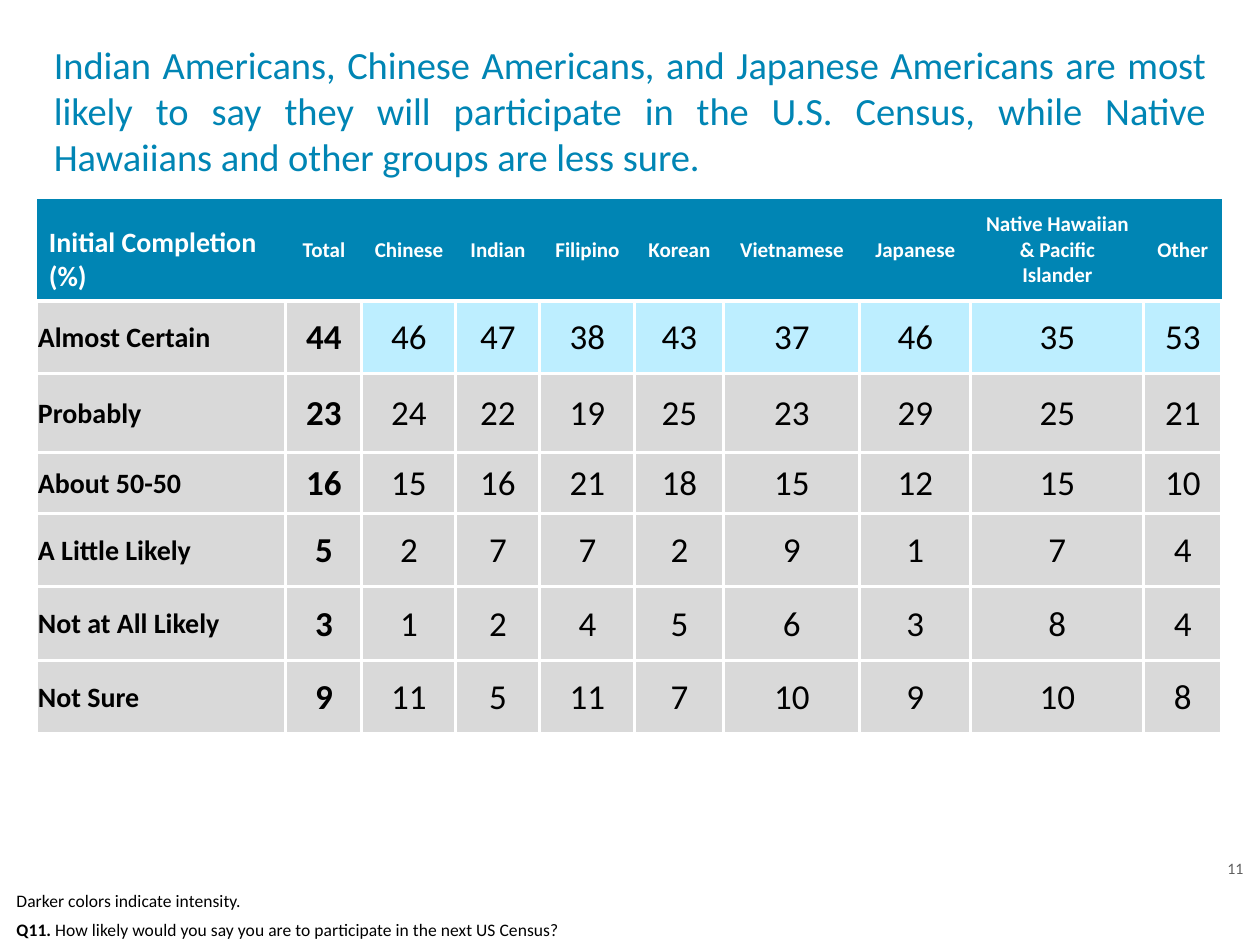
from lxml.etree import SubElement
from pptx import Presentation
from pptx.dml.color import RGBColor
from pptx.enum.text import MSO_ANCHOR, MSO_AUTO_SIZE, PP_ALIGN
from pptx.oxml.ns import qn
from pptx.util import Pt

PX = 914400 / 168


class Theme:
    font = "Calibri"
    blue, pale, grey = "0085B4", "BDEEFF", "D9D9D9"
    white, black, muted = "FFFFFF", "000000", "5F5F5F"
    title, label, head, value, note, number = 16.5, 12, 9, 15, 7.5, 6.8
    border = 1.5


TITLE = ("Indian Americans, Chinese Americans, and Japanese Americans are most "
         "likely to say they will participate in the U.S. Census, while Native "
         "Hawaiians and other groups are less sure.")
HEADINGS = ["Initial Completion (%)", "Total", "Chinese", "Indian", "Filipino",
            "Korean", "Vietnamese", "Japanese",
            "Native Hawaiian & Pacific Islander", "Other"]
ANSWERS = {
    "Almost Certain": [44, 46, 47, 38, 43, 37, 46, 35, 53],
    "Probably": [23, 24, 22, 19, 25, 23, 29, 25, 21],
    "About 50-50": [16, 15, 16, 21, 18, 15, 12, 15, 10],
    "A Little Likely": [5, 2, 7, 7, 2, 9, 1, 7, 4],
    "Not at All Likely": [3, 1, 2, 4, 5, 6, 3, 8, 4],
    "Not Sure": [9, 11, 5, 11, 7, 10, 9, 10, 8],
}
COL_WIDTHS = [249, 76, 94, 84, 95, 89, 136, 111, 173, 78]
ROW_HEIGHTS = [102, 73, 79, 61, 73, 74, 73]


def px(n):
    return round(n * PX)


def set_attrs(obj, values):
    for name, value in values.items():
        setattr(obj, name, value)


def write(p, text, size, color, bold=False, align=PP_ALIGN.LEFT):
    p.alignment = align
    r = p.add_run()
    r.text = text
    set_attrs(r.font, {"name": Theme.font, "size": Pt(size), "bold": bold})
    r.font.color.rgb = RGBColor.from_string(color)


def add_title(s, box):
    sp = s.shapes.title
    set_attrs(sp, dict(zip(("left", "top", "width", "height"), map(px, box))))
    tf = sp.text_frame
    set_attrs(tf, {"word_wrap": True, "auto_size": MSO_AUTO_SIZE.NONE,
                   "vertical_anchor": MSO_ANCHOR.MIDDLE})
    write(tf.paragraphs[0], TITLE, Theme.title, Theme.blue, align=PP_ALIGN.JUSTIFY)


def add_text(s, box, parts, size, color, align=PP_ALIGN.LEFT):
    """Place one line made of (text, bold) parts."""
    tf = s.shapes.add_textbox(*map(px, box)).text_frame
    tf.word_wrap = True
    for text, bold in parts:
        write(tf.paragraphs[0], text, size, color, bold, align)


def set_borders(cell, visible):
    """Draw the sides named in visible (of "LRTB") and clear the others."""
    tc_pr = cell._tc.get_or_add_tcPr()
    for i, side in enumerate("LRTB"):
        ln = tc_pr.makeelement(qn("a:ln" + side), {"w": str(Pt(Theme.border))})
        tc_pr.insert(i, ln)
        if side in visible:
            fill = SubElement(ln, qn("a:solidFill"))
            SubElement(fill, qn("a:srgbClr"), val=Theme.white)
        else:
            SubElement(ln, qn("a:noFill"))


def format_cell(cell, text, row, col):
    header, label = row == 0, col == 0
    inset_x, inset_top, inset_bottom = (12, 7, 7) if header else (1, 1, 0)
    set_attrs(cell, {
        "margin_left": px(inset_x), "margin_right": px(inset_x),
        "margin_top": px(inset_top), "margin_bottom": px(inset_bottom),
        "vertical_anchor": MSO_ANCHOR.BOTTOM if header and label else MSO_ANCHOR.MIDDLE,
    })
    cell.fill.solid()
    fill = Theme.blue if header else Theme.pale if row == 1 and col > 1 else Theme.grey
    cell.fill.fore_color.rgb = RGBColor.from_string(fill)
    set_borders(cell, "B" if header else "LRTB")
    size = Theme.label if label else Theme.head if header else Theme.value
    write(cell.text_frame.paragraphs[0], text, size,
          Theme.white if header else Theme.black, header or col < 2,
          PP_ALIGN.LEFT if label else PP_ALIGN.CENTER)


def add_answer_table(s, left, top):
    rows = [HEADINGS] + [[name, *values] for name, values in ANSWERS.items()]
    box = left, top, sum(COL_WIDTHS), sum(ROW_HEIGHTS)
    table = s.shapes.add_table(len(rows), len(HEADINGS), *map(px, box)).table
    for column, width in zip(table.columns, COL_WIDTHS):
        column.width = px(width)
    for i, (row, height) in enumerate(zip(rows, ROW_HEIGHTS)):
        table.rows[i].height = px(height)
        for j, value in enumerate(row):
            format_cell(table.cell(i, j), str(value), i, j)


def add_footer(s, left, top, width):
    add_text(s, (left + width - 94, top, 94, 42), [("11", False)],
             Theme.number, Theme.muted, PP_ALIGN.RIGHT)
    notes = [
        [("Darker colors indicate intensity.", False)],
        [("Q11. ", True),
         ("How likely would you say you are to participate in the next US Census?", False)],
    ]
    for i, parts in enumerate(notes):
        add_text(s, (left, top + 32 + 29 * i, 1040, 39), parts, Theme.note, Theme.black)


def main():
    prs = Presentation()
    set_attrs(prs, {"slide_width": px(1260), "slide_height": px(945)})
    s = prs.slides.add_slide(prs.slide_layouts[5])
    add_title(s, (37, 52, 1186, 116))
    add_answer_table(s, 37, 199)
    add_footer(s, 0, 850, 1260)
    prs.save("out.pptx")


if __name__ == "__main__":
    main()
